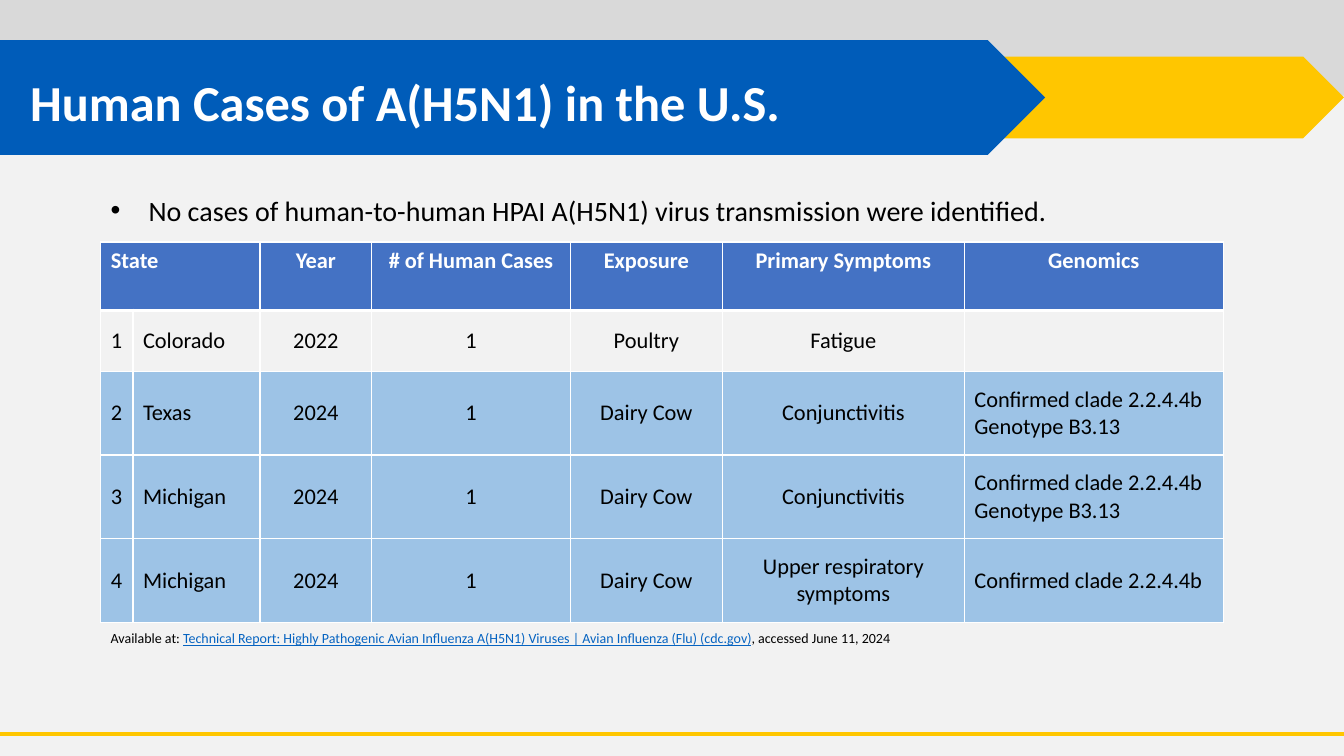
"""Builds the slide on human cases of A(H5N1) in the U.S."""
from lxml import etree
from pptx import Presentation
from pptx.dml.color import RGBColor
from pptx.enum import shapes, text
from pptx.oxml import ns
from pptx.util import Pt

WHITE = RGBColor(0xFF, 0xFF, 0xFF)
BLACK = RGBColor(0, 0, 0)
PAPER = RGBColor(0xF2, 0xF2, 0xF2)
GREY = RGBColor(0xD9, 0xD9, 0xD9)
GOLD = RGBColor(0xFF, 0xC6, 0x00)
BANNER_BLUE = RGBColor(0x00, 0x5C, 0xB9)
HEADER_BLUE = RGBColor(0x44, 0x72, 0xC4)
ROW_BLUE = RGBColor(0x9D, 0xC3, 0xE6)
LINK_BLUE = RGBColor(0x05, 0x63, 0xC1)


def add_run(paragraph, wording, size, color=BLACK, bold=False):
    run = paragraph.add_run()
    run.text = wording
    run.font.name = "Calibri"
    run.font.size = Pt(size)
    run.font.bold = bold
    run.font.color.rgb = color
    return run


def add_text_box(left, top, width, height, anchor=text.MSO_ANCHOR.TOP):
    box = slide.shapes.add_textbox(Pt(left), Pt(top), Pt(width), Pt(height))
    box.text_frame.word_wrap = True
    box.text_frame.vertical_anchor = anchor
    return box.text_frame.paragraphs[0]


presentation = Presentation()
presentation.slide_width = Pt(960)
presentation.slide_height = Pt(540)
slide = presentation.slides.add_slide(presentation.slide_layouts[6])
slide.background.fill.solid()
slide.background.fill.fore_color.rgb = PAPER

for preset, left, top, width, height, color in (
    (shapes.MSO_SHAPE.RECTANGLE, 0, 0, 960, 68.4, GREY),
    (shapes.MSO_SHAPE.PENTAGON, 510, 40.4, 450, 58.4, GOLD),
    (shapes.MSO_SHAPE.PENTAGON, 0, 28.6, 746.6, 82, BANNER_BLUE),
):
    shape = slide.shapes.add_shape(preset, Pt(left), Pt(top), Pt(width), Pt(height))
    shape.shadow.inherit = False
    shape.fill.solid()
    shape.fill.fore_color.rgb = color
    shape.line.fill.background()

footer_line = slide.shapes.add_connector(
    shapes.MSO_CONNECTOR.STRAIGHT, Pt(0), Pt(524.2), Pt(960), Pt(524.2))
footer_line.line.color.rgb = GOLD
footer_line.line.width = Pt(3)
etree.SubElement(footer_line._element.spPr, ns.qn("a:effectLst"))

title = add_text_box(14.4, 23, 828, 104.4, text.MSO_ANCHOR.MIDDLE)
title.line_spacing = 0.9
add_run(title, "Human Cases of A(H5N1) in the U.S.", 36, WHITE, True)

CLADE = "Confirmed clade 2.2.4.4b"
CLADE_AND_GENOTYPE = CLADE + "\nGenotype B3.13"
rows = (
    ("State", "", "Year", "# of Human Cases", "Exposure", "Primary Symptoms", "Genomics"),
    ("1", "Colorado", "2022", "1", "Poultry", "Fatigue", ""),
    ("2", "Texas", "2024", "1", "Dairy Cow", "Conjunctivitis", CLADE_AND_GENOTYPE),
    ("3", "Michigan", "2024", "1", "Dairy Cow", "Conjunctivitis", CLADE_AND_GENOTYPE),
    ("4", "Michigan", "2024", "1", "Dairy Cow", "Upper respiratory symptoms", CLADE),
)
column_widths = (23, 90.7, 79.9, 141.8, 108.7, 172.8, 185)
row_heights = (49, 43.4, 59.8, 59.8, 59.8)
row_fills = (HEADER_BLUE, None, ROW_BLUE, ROW_BLUE, ROW_BLUE)

table = slide.shapes.add_table(
    len(rows), len(column_widths), Pt(72), Pt(172.8),
    Pt(sum(column_widths)), Pt(sum(row_heights))).table
table.horz_banding = False
for column, width in zip(table.columns, column_widths):
    column.width = Pt(width)
for row, height in zip(table.rows, row_heights):
    row.height = Pt(height)

for row_index, wordings in enumerate(rows):
    header = row_index == 0
    for column_index, wording in enumerate(wordings):
        cell = table.cell(row_index, column_index)
        properties = cell._tc.get_or_add_tcPr()
        for side in ("lnL", "lnR", "lnT", "lnB"):
            heavy = (row_index, side) in ((0, "lnB"), (1, "lnT"))
            border = etree.SubElement(
                properties, ns.qn("a:" + side), w=str(Pt(3 if heavy else 1)))
            border_fill = etree.SubElement(border, ns.qn("a:solidFill"))
            etree.SubElement(border_fill, ns.qn("a:srgbClr"), val=str(WHITE))
        if row_fills[row_index] is None:
            cell.fill.background()
        else:
            cell.fill.solid()
            cell.fill.fore_color.rgb = row_fills[row_index]
        cell.vertical_anchor = text.MSO_ANCHOR.TOP if header else text.MSO_ANCHOR.MIDDLE
        if not wording:
            continue
        centred = 2 <= column_index <= 5 or (header and column_index == 6)
        for line_index, line in enumerate(wording.split("\n")):
            frame = cell.text_frame
            paragraph = frame.add_paragraph() if line_index else frame.paragraphs[0]
            paragraph.alignment = text.PP_ALIGN.CENTER if centred else text.PP_ALIGN.LEFT
            add_run(paragraph, line, 16, WHITE if header else BLACK, header)
table.cell(0, 0).merge(table.cell(0, 1))

citation = add_text_box(72, 446.4, 770.4, 19.4)
add_run(citation, "Available at: ", 10)
report = add_run(
    citation,
    "Technical Report: Highly Pathogenic Avian Influenza A(H5N1) Viruses"
    " | Avian Influenza (Flu) (cdc.gov)", 10, LINK_BLUE)
report.font.underline = True
add_run(citation, ", accessed June 11, 2024", 10)

finding = add_text_box(72, 134.6, 800.6, 31.7)
finding_properties = finding._p.get_or_add_pPr()
finding_properties.set("marL", str(Pt(27)))
finding_properties.set("indent", str(Pt(-27)))
etree.SubElement(finding_properties, ns.qn("a:buFont"), typeface="Arial")
etree.SubElement(finding_properties, ns.qn("a:buChar"), char="•")
add_run(
    finding,
    "No cases of human-to-human HPAI A(H5N1) virus transmission were identified.", 20)

presentation.save("out.pptx")
